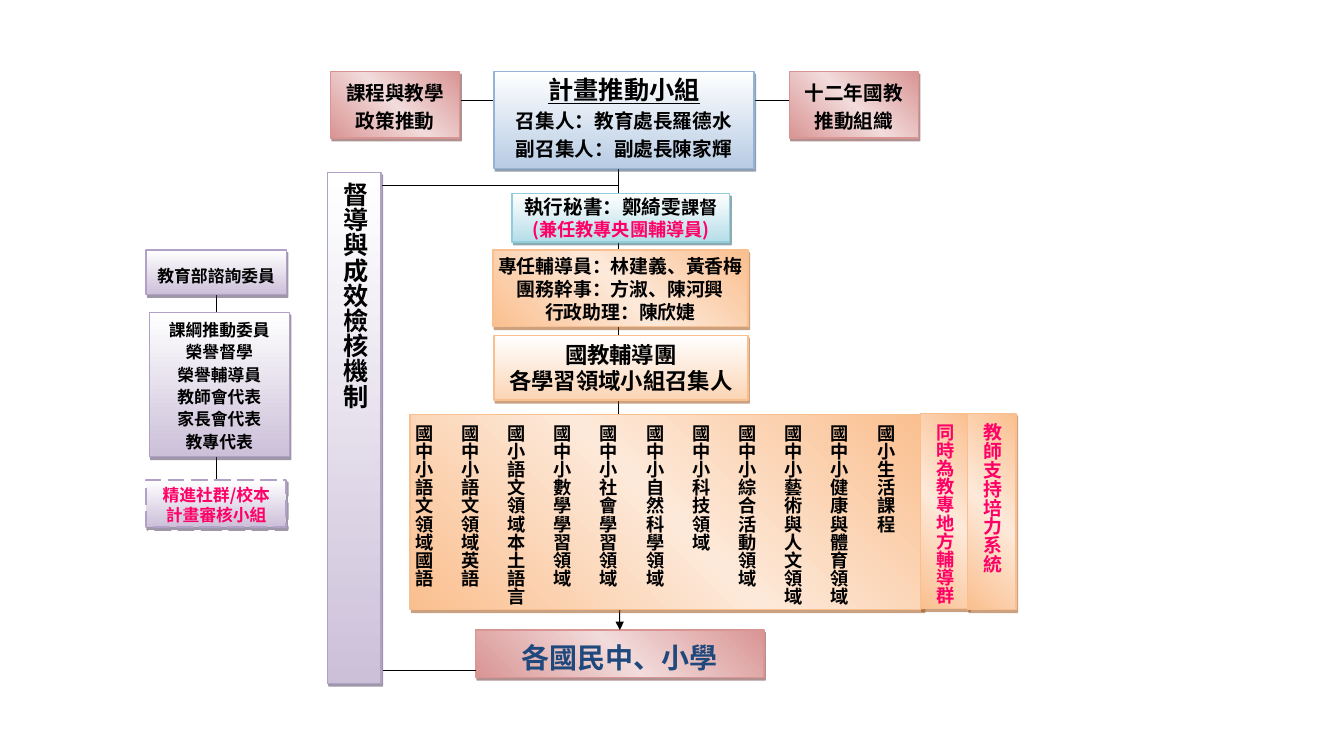
"""Build the organisation chart of a curriculum guidance programme."""
from copy import deepcopy
from dataclasses import dataclass
from typing import Optional

from lxml.etree import SubElement
from pptx import Presentation
from pptx.dml.color import RGBColor
from pptx.enum.dml import MSO_LINE
from pptx.enum.shapes import MSO_CONNECTOR, MSO_SHAPE
from pptx.enum.text import MSO_ANCHOR, PP_ALIGN
from pptx.oxml.ns import qn
from pptx.shapes.autoshape import Shape
from pptx.shapes.connector import Connector
from pptx.slide import Slide
from pptx.util import Pt

FONT = "Noto Sans CJK SC"
BLACK, PINK, NAVY = "000000", "FF0066", "1F497D"
NORMAL_INSETS, SLIM_INSETS, TIGHT_INSETS = (7.2, 3.6), (2.88, 3.6), (1.44, 0.72)


@dataclass(frozen=True)
class Style:
    stops: tuple[str, ...]
    outline: str
    shadow: str
    angle: int = 270


@dataclass(frozen=True)
class Span:
    text: str
    size: float
    color: str = BLACK
    underline: bool = False


@dataclass(frozen=True)
class Box:
    left: float
    top: float
    width: float
    height: float
    style: Style
    paras: tuple[tuple[Span, ...], ...]
    spacing: Optional[float] = None
    middle: bool = False
    vertical: bool = False
    indent: Optional[float] = None
    insets: tuple[float, float] = NORMAL_INSETS
    dashed: bool = False


@dataclass(frozen=True)
class Link:
    start: tuple[float, float]
    end: tuple[float, float]


BLUE = Style(("FFFFFF", "B8CCE4"), "95B3D7", "243F60")
TEAL = Style(("FFFFFF", "B6DDE8"), "92CDDC", "205867")
PURPLE = Style(("FFFFFF", "CCC0D9"), "B2A1C7", "3F3151")
PEACH = Style(("FFFFFF", "FBD4B4"), "FABF8F", "974706")
ORANGE = Style(("FABF8F", "FDE9D9", "FABF8F"), "FABF8F", "974706", 45)
RED = Style(("D99594", "F2DBDB", "D99594"), "D99594", "622423", 45)


def lines(size: float, *texts: str, color: str = BLACK) -> tuple[tuple[Span, ...], ...]:
    """Return one single-span paragraph for each text."""
    return tuple((Span(text, size, color),) for text in texts)


SCHOOLS = Box(339.8, 450, 205.9, 33.8, RED, lines(20, "各國民中、小學", color=NAVY), 28)
BOXES = (
    Box(352.8, 51.1, 185.8, 69.1, BLUE,
        ((Span("計畫推動小組", 18, underline=True),),
         *lines(14, "召集人：教育處長羅德水", "副召集人：副處長陳家輝")), 20),
    Box(236.2, 51.1, 92.2, 47.5, RED, lines(14, "課程與教學", "政策推動"), 20),
    Box(563.8, 51.1, 92.2, 47.5, RED, lines(14, "十二年國教", "推動組織"), 20),
    Box(352.1, 178.6, 182.2, 54.7, ORANGE,
        lines(13.5, "專任輔導員：林建義、黃香梅", "團務幹事：方淑、陳河興", "行政助理：陳欣婕"),
        insets=SLIM_INSETS),
    Box(352.8, 239.8, 181.4, 46.1, PEACH, lines(16, "國教輔導團", "各學習領域小組召集人")),
    Box(365.8, 138.2, 155.5, 34.6, TEAL,
        ((Span("執行秘書：鄭綺雯", 14), Span("課督", 13)),
         *lines(13, "(兼任教專央團輔導員)", color=PINK)), middle=True),
    Box(293, 295.9, 366.5, 139.7, ORANGE,
        lines(13, "國小生活課程", "國中小健康與體育領域", "國中小藝術與人文領域",
              "國中小綜合活動領域", "國中小科技領域", "國中小自然科學領域",
              "國中小社會學習領域", "國中小數學學習領域", "國小語文領域本土語言",
              "國中小語文領域英語", "國中小語文領域國語"),
        33, True, True, 6.5, TIGHT_INSETS),
    Box(104.4, 178.6, 100.1, 31.7, PURPLE, lines(12, "教育部諮詢委員"), 22),
    Box(106.6, 223.2, 100.1, 103, PURPLE,
        lines(12, "課綱推動委員", "榮譽督學", "榮譽輔導員", "教師會代表", "家長會代表", "教專代表"), 16),
    Box(234, 123.1, 38.2, 365, PURPLE, lines(18, "督導與成效檢核機制"), 20, True, True),
    Box(657.4, 295.2, 34.6, 139.7, ORANGE, lines(13, "同時為教專地方輔導群", color=PINK),
        None, True, True, 6.5, TIGHT_INSETS),
    Box(104.4, 342.7, 100.1, 33.8, PURPLE, lines(12, "精進社群/校本計畫審核小組", color=PINK),
        dashed=True),
    Box(691.2, 295.2, 34.6, 140.4, ORANGE, lines(13.5, "教師支持培力系統", color=PINK),
        None, True, True, None, SLIM_INSETS),
)
ARROW = Link((442.1, 401.8), (442.1, 450))
LINKS = (
    Link((442.1, 120.2), (442.1, 399.6)),
    Link((329, 72), (352.1, 72)),
    Link((537.8, 72), (563.8, 72)),
    Link((154.8, 203.8), (154.8, 369.4)),
    Link((262.8, 132.5), (442.1, 132.5)),
    Link((273.6, 478.8), (339.8, 478.8)),
)


def rgb(color: str) -> RGBColor:
    """Turn a hex string into a colour."""
    return RGBColor.from_string(color)


def paint(shape: Shape, style: Style, dashed: bool) -> None:
    """Give a shape its gradient, outline and shadow."""
    shape.fill.gradient()
    shape.fill.gradient_angle = style.angle
    properties = shape._element.spPr
    stop_list = properties.find(qn("a:gradFill")).find(qn("a:gsLst"))
    for _ in style.stops[2:]:
        stop_list.append(deepcopy(stop_list[0]))
    for index, (stop, color) in enumerate(zip(shape.fill.gradient_stops, style.stops)):
        stop.color.rgb = rgb(color)
        stop.position = index / (len(style.stops) - 1)
    shape.line.color.rgb = rgb(style.outline)
    shape.line.width = Pt(1.5 if dashed else 1)
    if dashed:
        shape.line.dash_style = MSO_LINE.LONG_DASH
    shape.shadow.inherit = False
    shadow = SubElement(properties.find(qn("a:effectLst")), qn("a:outerShdw"), blurRad="0",
                        dist=str(Pt(2.2)), dir=str(63 * 60000), algn="ctr", rotWithShape="0")
    shade = SubElement(shadow, qn("a:srgbClr"), val=style.shadow)
    SubElement(shade, qn("a:alpha"), val="50000")


def write(shape: Shape, box: Box) -> None:
    """Fill a shape with the paragraphs of its box."""
    frame = shape.text_frame
    frame.word_wrap = True
    frame.vertical_anchor = MSO_ANCHOR.MIDDLE if box.middle else MSO_ANCHOR.TOP
    frame.margin_left = frame.margin_right = Pt(box.insets[0])
    frame.margin_top = frame.margin_bottom = Pt(box.insets[1])
    if box.vertical:
        frame._txBody.bodyPr.set("vert", "eaVert")
    for index, spans in enumerate(box.paras):
        para = frame.add_paragraph() if index else frame.paragraphs[0]
        para.alignment = PP_ALIGN.CENTER if box.indent is None else PP_ALIGN.LEFT
        if box.indent is not None:
            para._p.get_or_add_pPr().set("indent", str(Pt(box.indent)))
        if box.spacing is not None:
            para.line_spacing = Pt(box.spacing)
        for span in spans:
            run = para.add_run()
            run.text = span.text
            run.font.size = Pt(span.size)
            run.font.bold = True
            run.font.underline = span.underline
            run.font.color.rgb = rgb(span.color)
            run.font.name = FONT
            SubElement(run._r.get_or_add_rPr(), qn("a:ea"), typeface=FONT)


def draw_box(page: Slide, box: Box) -> Shape:
    """Draw one labelled rectangle."""
    shape = page.shapes.add_shape(MSO_SHAPE.RECTANGLE, Pt(box.left), Pt(box.top),
                                  Pt(box.width), Pt(box.height))
    paint(shape, box.style, box.dashed)
    write(shape, box)
    return shape


def draw_link(page: Slide, link: Link, arrow: bool = False) -> Connector:
    """Draw one black line, with arrowheads if asked."""
    connector = page.shapes.add_connector(MSO_CONNECTOR.STRAIGHT, *map(Pt, link.start + link.end))
    connector.line.color.rgb = rgb(BLACK)
    connector.line.width = Pt(0.75)
    if arrow:
        for tag in ("a:headEnd", "a:tailEnd"):
            SubElement(connector.line._get_or_add_ln(), qn(tag), type="triangle")
    SubElement(connector._element.spPr, qn("a:effectLst"))
    return connector


def main() -> None:
    """Build and save the deck."""
    deck = Presentation()
    deck.slide_width, deck.slide_height = Pt(960), Pt(540)
    page = deck.slides.add_slide(deck.slide_layouts[6])
    schools = draw_box(page, SCHOOLS)
    draw_link(page, ARROW, arrow=True).end_connect(schools, 0)
    for link in LINKS:
        draw_link(page, link)
    for box in BOXES:
        draw_box(page, box)
    deck.save("out.pptx")


if __name__ == "__main__":
    main()
